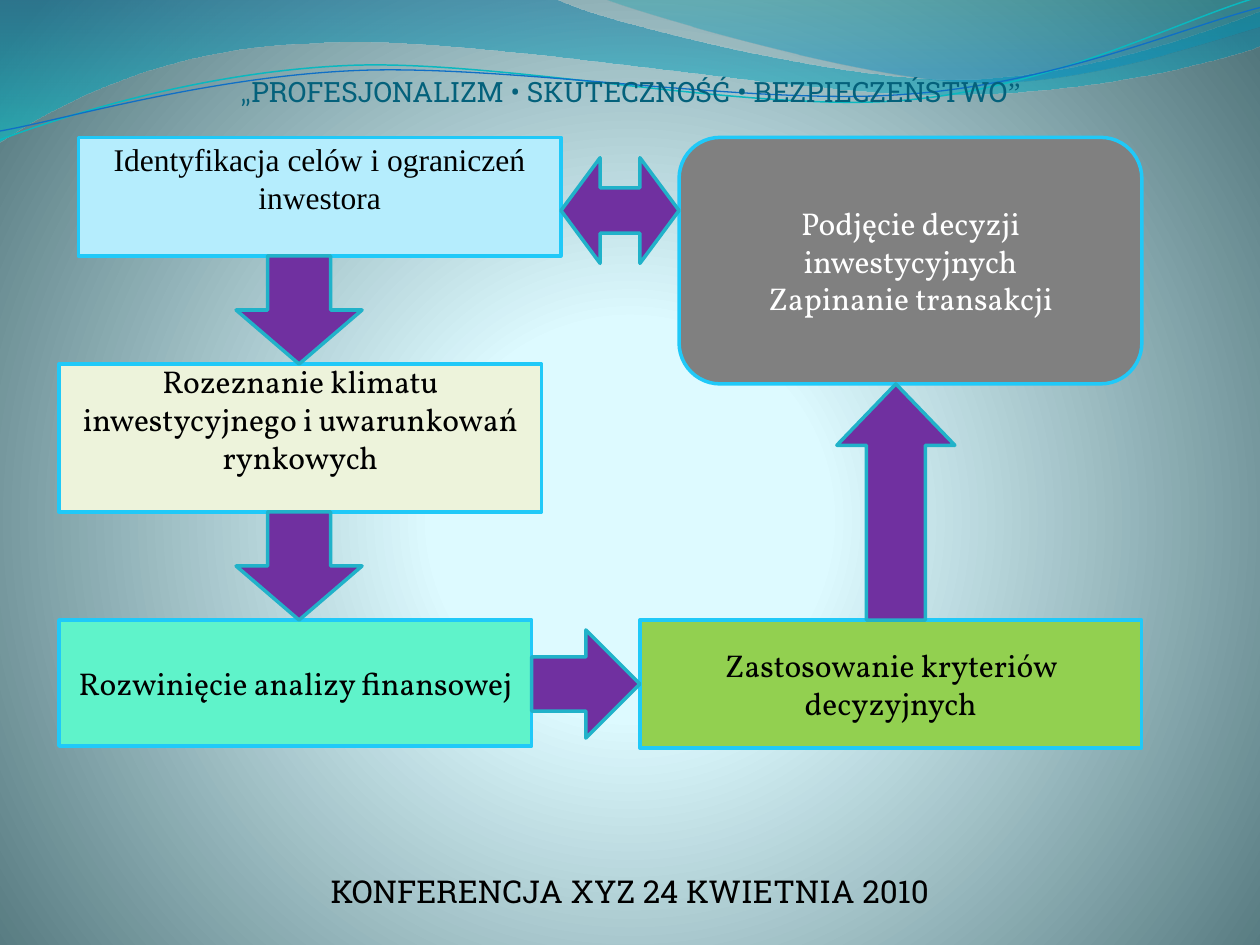
"""Build the investment decision process slide."""
import lxml.etree
import pptx
import pptx.dml.color
import pptx.enum.shapes
import pptx.enum.text
import pptx.oxml.ns
import pptx.util

Cm, Pt = pptx.util.Cm, pptx.util.Pt
RGB = pptx.dml.color.RGBColor.from_string
SHAPE = pptx.enum.shapes.MSO_SHAPE
ANCHOR = pptx.enum.text.MSO_ANCHOR
CENTER = pptx.enum.text.PP_ALIGN.CENTER
qn = pptx.oxml.ns.qn

COLORS = {
    "title": "04617B", "black": "000000", "white": "FFFFFF",
    "goals": "B5EDFD", "climate": "EDF3DB", "analysis": "5FF3CA",
    "criteria": "92D050", "decision": "808080", "box_line": "20C9F8",
    "arrow": "7030A0", "arrow_line": "21B2C9",
    "bg_center": "DEFBFF", "bg_middle": "DDFAFF", "bg_edge": "52767C",
    "wave_blue": "0074A1", "wave_cyan": "00C6CF",
    "crest_teal": "00A1A9", "crest_blue": "008BBF",
    "line_teal": "0AB8BF", "line_blue": "0F6FC6",
}


def gradient(stops, circle=False):
    grad = lxml.etree.Element(qn("a:gradFill"), rotWithShape="1")
    gs_list = lxml.etree.SubElement(grad, qn("a:gsLst"))
    for pos, color, alpha in stops:
        gs = lxml.etree.SubElement(gs_list, qn("a:gs"), pos=str(pos * 1000))
        clr = lxml.etree.SubElement(gs, qn("a:srgbClr"), val=COLORS[color])
        if alpha < 100:
            lxml.etree.SubElement(clr, qn("a:alpha"), val=str(alpha * 1000))
    if circle:
        kind = lxml.etree.SubElement(grad, qn("a:path"), path="circle")
        lxml.etree.SubElement(kind, qn("a:fillToRect"),
                              l="10000", t="110000", r="10000", b="100000")
    else:
        lxml.etree.SubElement(grad, qn("a:lin"), ang="5400000", scaled="1")
    return grad


def add_curve(start, segments, close):
    pts = [(Cm(2.54 * seg[i]), Cm(2.54 * seg[i + 1]))
           for seg in [start] + segments for i in range(0, len(seg), 2)]
    fb = s.shapes.build_freeform(*pts[0])
    fb.add_line_segments(pts[1:], close=close)
    sp = fb.convert_to_shape()
    sp.shadow.inherit = False
    sp.fill.background()
    lines = iter(list(sp._element.iter(qn("a:lnTo"))))
    for seg in segments:
        first = next(lines)
        if len(seg) == 6:
            bezier = lxml.etree.Element(qn("a:cubicBezTo"))
            first.addprevious(bezier)
            for line in (first, next(lines), next(lines)):
                bezier.append(line[0])
                line.getparent().remove(line)
    return sp


prs = pptx.Presentation()
prs.slide_width, prs.slide_height = Cm(25.4), Cm(19.05)
s = prs.slides.add_slide(prs.slide_layouts[6])

s.background.fill.solid()
solid = next(s._element.iter(qn("a:solidFill")))
solid.getparent().replace(solid, gradient(
    [(0, "bg_center", 100), (25, "bg_middle", 100), (100, "bg_edge", 100)], True))

waves = [
    ((0, 0), [(4.4, -0.01), (4.76, 0.17, 6.64, 0.63, 7.58, 0.63),
              (8.53, 0.63, 9.58, 0.26, 10, 0.09), (10.01, 0.36),
              (9.83, 0.44, 8.7, 0.76, 7.46, 0.75),
              (6.22, 0.75, 3.82, 0.28, 2.57, 0.34),
              (1.29, 0.36, 0.46, 0.83, -0.01, 1.13), (0, 0)],
     [(0, "wave_blue", 45), (100, "wave_cyan", 55)]),
    ((4.79, -0.01), [(5.09, 0.11, 6.82, 0.62, 7.69, 0.65),
                     (8.56, 0.69, 9.61, 0.32, 10, 0.21), (10, 0), (4.79, -0.01)],
     [(0, "crest_teal", 30), (80, "crest_blue", 45)]),
]
for start, segments, stops in waves:
    sp = add_curve(start, segments, True)
    sp.line.fill.background()
    spPr = sp._element.spPr
    spPr.replace(spPr.find(qn("a:noFill")), gradient(stops))

wave_lines = [
    ((0, 1.11), [(0.48, 0.93, 1.58, 0.57, 2.77, 0.52),
                 (3.95, 0.47, 5.93, 0.89, 7.13, 0.8),
                 (8.33, 0.71, 9.38, 0.15, 9.98, -0.02)], "line_teal", 0.85),
    ((0, 1.04), [(0.47, 0.96, 1.64, 0.61, 2.83, 0.56),
                 (4.03, 0.51, 5.97, 0.84, 7.17, 0.75),
                 (8.36, 0.67, 9.41, 0.21, 10, 0.06)], "line_blue", 0.75),
]
for start, segments, color, width in wave_lines:
    sp = add_curve(start, segments, False)
    sp.line.color.rgb = RGB(COLORS[color])
    sp.line.width = Pt(width)

captions = [
    (1.27, 0.76, 22.86, 1.42, ANCHOR.BOTTOM, 0, 16, "title",
     [("„", "Calibri"),
      ("PROFESJONALIZM • SKUTECZNOŚĆ • BEZPIECZEŃSTWO", "Roboto Slab"),
      ("”", "Times New Roman")]),
    (0, 17.46, 25.4, 1.02, ANCHOR.TOP, 0.13, 18, "black",
     [("KONFERENCJA XYZ 24 KWIETNIA 2010", "Roboto Slab")]),
]
for x, y, w, h, anchor, bottom, size, color, runs in captions:
    tf = s.shapes.add_textbox(Cm(x), Cm(y), Cm(w), Cm(h)).text_frame
    tf.word_wrap = True
    tf.vertical_anchor = anchor
    tf.margin_left = tf.margin_right = 0
    tf.margin_bottom = Cm(bottom)
    p = tf.paragraphs[0]
    p.alignment = CENTER
    for text, font in runs:
        r = p.add_run()
        r.text = text
        r.font.name, r.font.size = font, Pt(size)
        r.font.color.rgb = RGB(COLORS[color])

boxes = [
    (SHAPE.RECTANGLE, 1.58, 2.77, 9.73, 2.39, "goals", "black", "Times New Roman",
     0.88, "Identyfikacja celów i ograniczeń inwestora"),
    (SHAPE.RECTANGLE, 1.19, 7.34, 9.73, 2.98, "climate", "black", "Vollkorn",
     0.9, "Rozeznanie klimatu inwestycyjnego i uwarunkowań rynkowych"),
    (SHAPE.RECTANGLE, 1.19, 12.5, 9.53, 2.54, "analysis", "black", "Vollkorn",
     0.13, "Rozwinięcie analizy finansowej"),
    (SHAPE.RECTANGLE, 12.9, 12.5, 10.11, 2.58, "criteria", "black", "Vollkorn",
     0.13, "Zastosowanie kryteriów decyzyjnych"),
    (SHAPE.ROUNDED_RECTANGLE, 13.69, 2.77, 9.33, 4.97, "decision", "white", "Vollkorn",
     0.13, "Podjęcie decyzji inwestycyjnych\nZapinanie transakcji"),
]
for kind, x, y, w, h, fill, color, font, bottom, text in boxes:
    sp = s.shapes.add_shape(kind, Cm(x), Cm(y), Cm(w), Cm(h))
    sp.shadow.inherit = False
    sp.fill.solid()
    sp.fill.fore_color.rgb = RGB(COLORS[fill])
    sp.line.color.rgb = RGB(COLORS["box_line"])
    sp.line.width = Pt(2)
    tf = sp.text_frame
    tf.word_wrap = True
    tf.vertical_anchor = ANCHOR.MIDDLE
    tf.margin_bottom = Cm(bottom)
    tf.text = text
    for p in tf.paragraphs:
        p.alignment = CENTER
        r = p.runs[0]
        r.font.name, r.font.size = font, Pt(18)
        r.font.color.rgb = RGB(COLORS[color])

arrows = [
    (SHAPE.DOWN_ARROW, 4.76, 5.16, 2.54, 2.18, (0.5, 0.5)),
    (SHAPE.DOWN_ARROW, 4.76, 10.32, 2.54, 2.18, (0.5, 0.5)),
    (SHAPE.RIGHT_ARROW, 10.72, 12.7, 2.18, 2.18, (0.5, 0.5)),
    (SHAPE.UP_ARROW, 16.87, 7.74, 2.38, 4.76, (0.5, 0.52)),
    (SHAPE.LEFT_RIGHT_ARROW, 11.31, 3.18, 2.38, 2.13, (0.43, 0.37)),
]
for kind, x, y, w, h, adjustments in arrows:
    sp = s.shapes.add_shape(kind, Cm(x), Cm(y), Cm(w), Cm(h))
    sp.shadow.inherit = False
    sp.fill.solid()
    sp.fill.fore_color.rgb = RGB(COLORS["arrow"])
    sp.line.color.rgb = RGB(COLORS["arrow_line"])
    sp.line.width = Pt(2)
    for i, value in enumerate(adjustments):
        sp.adjustments[i] = value

prs.save("out.pptx")
